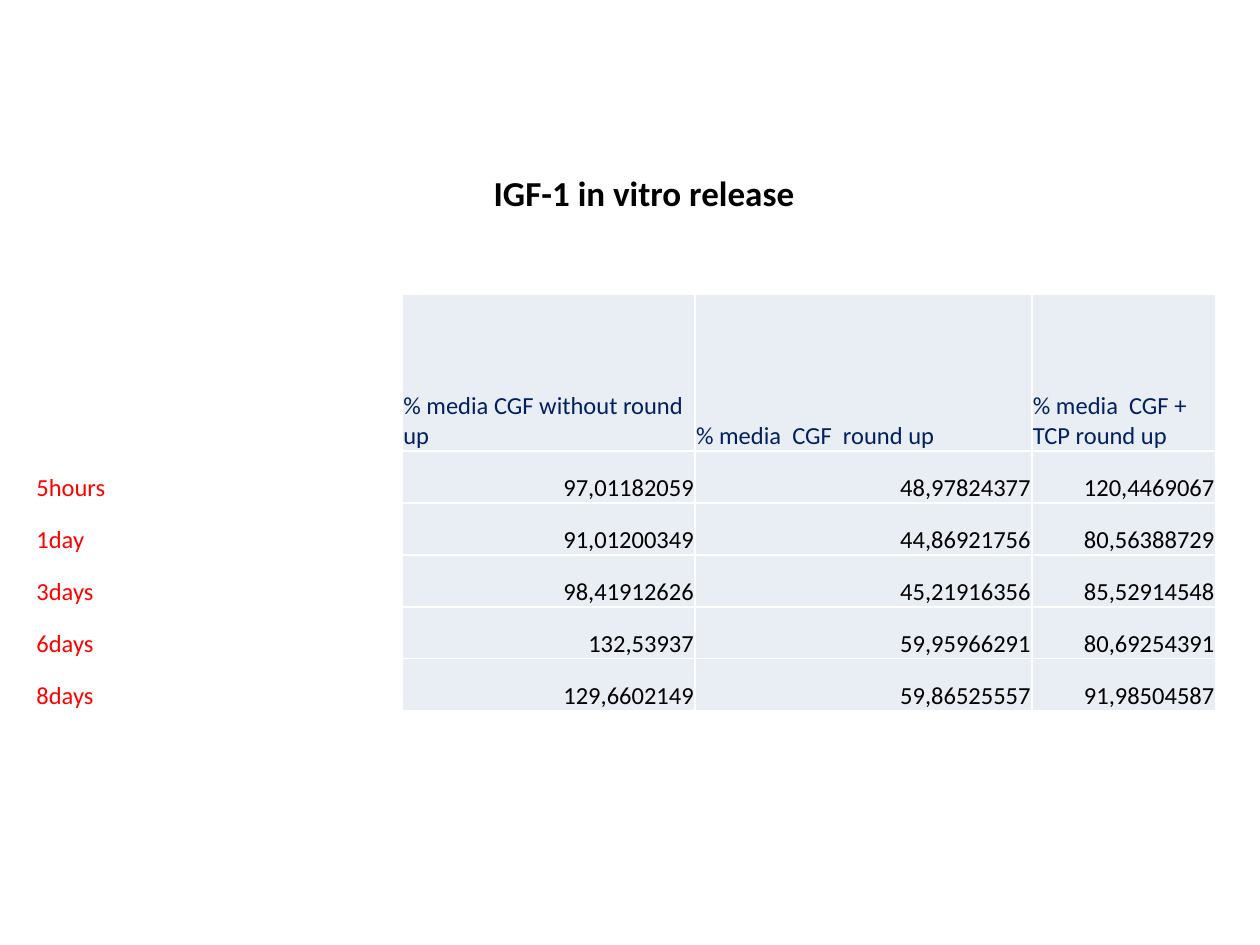
from lxml.etree import SubElement
from pptx import Presentation
from pptx.dml.color import RGBColor
from pptx.enum.text import MSO_ANCHOR, PP_ALIGN
from pptx.oxml.ns import qn
from pptx.util import Pt


def color(value):
    return RGBColor.from_string(value)


def write(paragraph, text, size, ink, bold=False):
    span = paragraph.add_run()
    span.text = text
    span.font.color.rgb = color(ink)
    for name, value in {"name": "Calibri", "size": Pt(size), "bold": bold}.items():
        setattr(span.font, name, value)


deck = Presentation()
deck.slide_width, deck.slide_height = Pt(720), Pt(540)
page = deck.slides.add_slide(deck.slide_layouts[6])

# Release table
rows = [
    ["", "% media CGF without round up", "% media  CGF  round up", "% media  CGF + TCP round up"],
    ["5hours", "97,01182059", "48,97824377", "120,4469067"],
    ["1day", "91,01200349", "44,86921756", "80,56388729"],
    ["3days", "98,41912626", "45,21916356", "85,52914548"],
    ["6days", "132,53937", "59,95966291", "80,69254391"],
    ["8days", "129,6602149", "59,86525557", "91,98504587"],
]
widths = [209.7, 167.3, 192.5, 105]
heights = [89.7] + [29.7] * 5
frame = page.shapes.add_table(
    len(rows), len(widths), Pt(20.2), Pt(168), Pt(sum(widths)), Pt(sum(heights))
)
table = frame.table
table.first_row = table.horz_banding = False
for column, width in zip(table.columns, widths):
    column.width = Pt(width)
for row, height in zip(table.rows, heights):
    row.height = Pt(height)

cell_format = {
    "margin_left": Pt(0.6),
    "margin_right": Pt(0.6),
    "margin_top": Pt(0.6),
    "margin_bottom": Pt(0),
    "vertical_anchor": MSO_ANCHOR.BOTTOM,
}
for r, texts in enumerate(rows):
    for c, text in enumerate(texts):
        cell = table.cell(r, c)
        for name, value in cell_format.items():
            setattr(cell, name, value)

        # White cell borders, which must come before the fill
        properties = cell._tc.get_or_add_tcPr()
        for side in ("lnL", "lnR", "lnT", "lnB"):
            line = SubElement(properties, qn(f"a:{side}"), w=str(Pt(1)))
            fill = SubElement(line, qn("a:solidFill"))
            SubElement(fill, qn("a:srgbClr"), val="FFFFFF")

        # Only the value columns are tinted
        if c == 0:
            cell.fill.background()
        else:
            cell.fill.solid()
            cell.fill.fore_color.rgb = color("E9EDF4")

        paragraph = cell.text_frame.paragraphs[0]
        is_value = r > 0 and c > 0
        paragraph.alignment = PP_ALIGN.RIGHT if is_value else PP_ALIGN.LEFT
        if text:
            ink = "000000" if is_value else "FF0000" if c == 0 else "002060"
            write(paragraph, text, 14, ink)

# Title
box = page.shapes.add_textbox(Pt(275), Pt(94.5), Pt(192), Pt(31.5))
box.text_frame.word_wrap = False
write(box.text_frame.paragraphs[0], "IGF-1 in vitro release", 20, "000000", bold=True)

deck.save("out.pptx")
